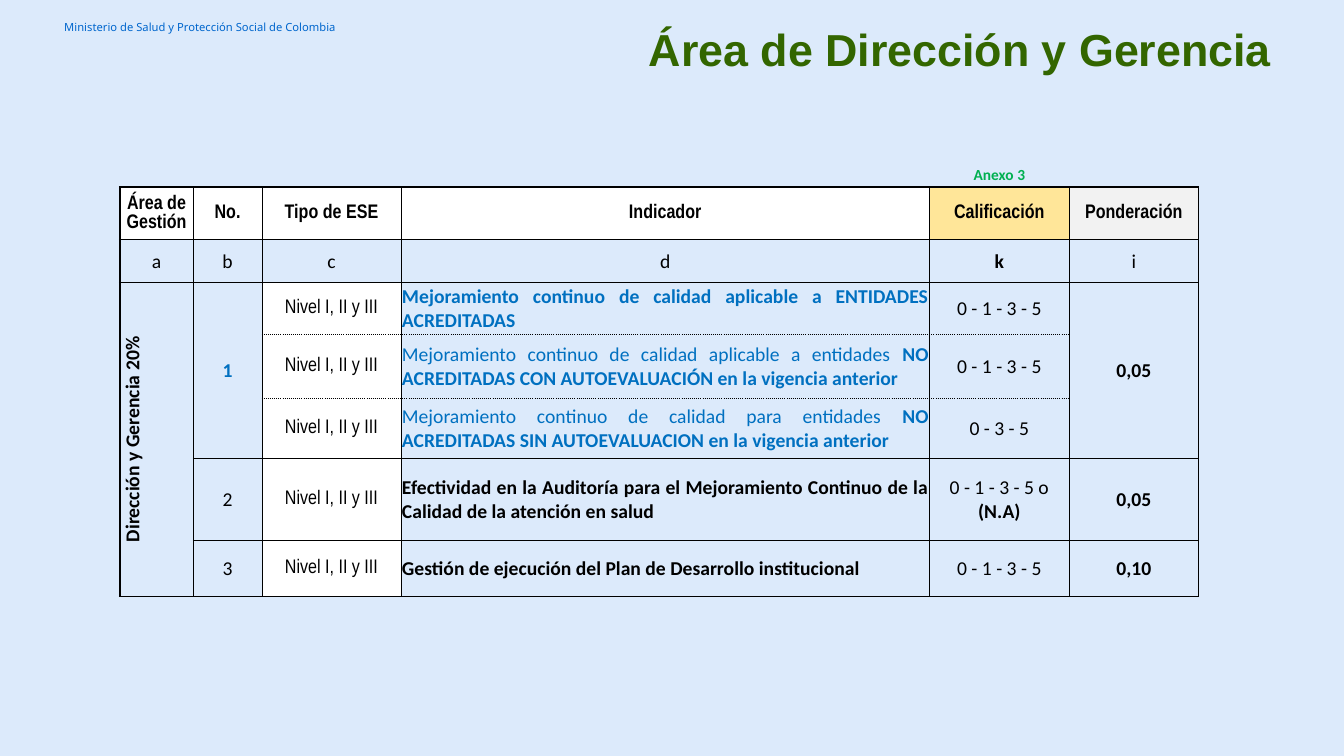
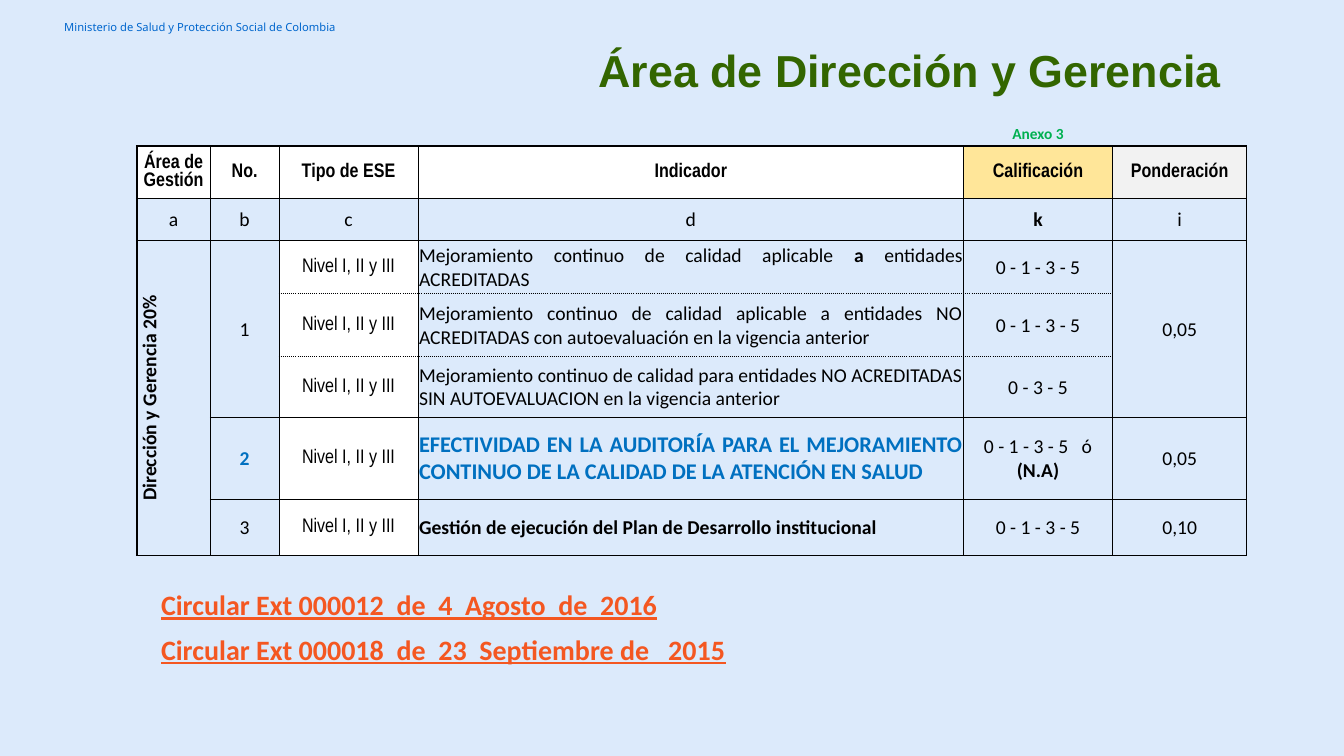
import lxml.etree
import pptx
import pptx.dml.color
import pptx.enum.text
import pptx.oxml.ns
import pptx.util

Cm = pptx.util.Cm
Pt = pptx.util.Pt
qn = pptx.oxml.ns.qn
ALIGN = pptx.enum.text.PP_ALIGN
MIDDLE = pptx.enum.text.MSO_ANCHOR.MIDDLE

COLORS = {
    "background": "DCEAFB", "ministry": "0066CD", "title": "336600",
    "text": "000000", "highlight": "0070C0", "annex": "00B050",
    "circular": "F45721", "white": "FFFFFF", "score": "FFE699", "weight": "F2F2F2",
}
ROW_HEIGHTS = [0.61, 1.32, 1.07, 1.32, 1.6, 1.52, 2.06, 1.42]
EDGE_WIDTHS = [None, 1.5, 0.5, 1, 0.5, 0.5, 0.5, 0.5, 1]
HEADERS = ["Área de Gestión", "No.", "Tipo de ESE", "Indicador", "Calificación", "Ponderación"]
HEADER_FILLS = ["white"] * 4 + ["score", "weight"]
NUMBERS = {3: "1", 6: "2", 7: "3"}
WEIGHTS = {3: "0,05", 6: "0,05", 7: "0,10"}
MERGES = [(3, 0, 7), (3, 1, 5), (3, 5, 5)]
PLAN = [("Gestión de ejecución del Plan de Desarrollo institucional", True)]


def rgb(name):
    """Return the named colour."""
    return pptx.dml.color.RGBColor.from_string(COLORS[name])


def style(p, size, font="Calibri", color="text", bold=None, align=None):
    """Format a whole paragraph."""
    p.font.size = Pt(size)
    p.font.name = font
    p.font.color.rgb = rgb(color)
    p.font.bold = bold
    p.alignment = align


def add_ministry_line(prs, s):
    """Place the ministry's name on the slide master."""
    box = s.shapes.add_textbox(Cm(1.37), Cm(0.36), Cm(7.92), Cm(0.66))
    tf = box.text_frame
    tf.word_wrap = True
    tf.vertical_anchor = MIDDLE
    tf.text = "Ministerio de Salud y Protección Social de Colombia"
    style(tf.paragraphs[0], 8, "Noto Sans", "ministry")
    prs.slide_master.shapes.element.append(box.element)


def add_slide(prs, left, top):
    """Add a slide with the area title at the given place."""
    s = prs.slides.add_slide(prs.slide_layouts[5])
    title = s.shapes.title
    title.left, title.top, title.width, title.height = Cm(left), Cm(top), Cm(18.19), Cm(1.78)
    tf = title.text_frame
    tf.vertical_anchor = MIDDLE
    tf.text = "Área de Dirección y Gerencia"
    p = tf.paragraphs[0]
    style(p, 32, "Arial", "title", True, ALIGN.RIGHT)
    p.line_spacing = 0.9
    return s


def write(cell, lines, size=14, align=ALIGN.CENTER, **look):
    """Fill a cell with lines, each one a string or a list of text and bold pairs."""
    tf = cell.text_frame
    for i, line in enumerate(lines):
        p = tf.add_paragraph() if i else tf.paragraphs[0]
        style(p, size, align=align, **look)
        if isinstance(line, str):
            p.add_run().text = line
            continue
        for text, bold in line:
            r = p.add_run()
            r.text = text
            r.font.bold = bold


def edge(y, x):
    """Return the width and dash of the line above row y in column x."""
    if (x == 0 and 3 < y < 8) or (x in (1, 5) and y in (4, 5)):
        return None, "solid"
    return EDGE_WIDTHS[y], "sysDot" if y in (4, 5) else "solid"


def set_border(tc_pr, tag, width, dash="solid"):
    """Draw one side of a cell, or clear it when there is no width."""
    ln = lxml.etree.Element(qn(tag), w=str(Pt(width or 0)))
    if width:
        fill = lxml.etree.SubElement(ln, qn("a:solidFill"))
        lxml.etree.SubElement(fill, qn("a:srgbClr"), val=COLORS["text"])
        lxml.etree.SubElement(ln, qn("a:prstDash"), val=dash)
    else:
        lxml.etree.SubElement(ln, qn("a:noFill"))
    return ln


def format_cell(cell, y, x):
    """Set the margins, fill and borders of a cell."""
    cell.margin_left = cell.margin_right = cell.margin_top = Cm(0.02)
    cell.margin_bottom = 0
    cell.vertical_anchor = MIDDLE
    fill = HEADER_FILLS[x] if y == 1 else "white" if x == 2 and y > 2 else None
    if fill:
        cell.fill.solid()
        cell.fill.fore_color.rgb = rgb(fill)
    else:
        cell.fill.background()
    if not cell.text:
        p = cell.text_frame.paragraphs[0]
        lxml.etree.SubElement(p._p, qn("a:endParaRPr"), sz="1100")
    side = 0.5 if y else None
    tc_pr = cell._tc.get_or_add_tcPr()
    borders = [
        set_border(tc_pr, "a:lnL", 1.5 if y and x == 0 else side),
        set_border(tc_pr, "a:lnR", side),
        set_border(tc_pr, "a:lnT", *edge(y, x)),
        set_border(tc_pr, "a:lnB", *edge(y + cell.span_height, x)),
    ]
    for i, ln in enumerate(borders):
        tc_pr.insert(i, ln)


def add_indicator_table(s, left, top, widths, indicators, scores, current, bold_weights):
    """Add the indicator table with the current indicator highlighted."""
    frame = s.shapes.add_table(len(ROW_HEIGHTS), len(widths), Cm(left), Cm(top),
                               Cm(sum(widths)), Cm(sum(ROW_HEIGHTS)))
    table = frame.table
    table.first_row = table.horz_banding = False
    for row, height in zip(table.rows, ROW_HEIGHTS):
        row.height = Cm(height)
    for column, width in zip(table.columns, widths):
        column.width = Cm(width)
    for first, x, last in MERGES:
        table.cell(first, x).merge(table.cell(last, x))

    write(table.cell(0, 4), ["Anexo 3"], 11, color="annex", bold=True)
    for x, (header, letter) in enumerate(zip(HEADERS, "abcdki")):
        write(table.cell(1, x), [header], font="Arial Narrow", bold=True)
        write(table.cell(2, x), [letter], bold=letter == "k")
    area = table.cell(3, 0)
    write(area, ["Dirección y Gerencia 20%"], bold=True)
    area._tc.get_or_add_tcPr().set("vert", "vert270")

    for y, (indicator, score) in enumerate(zip(indicators, scores), 3):
        write(table.cell(y, 2), ["Nivel I, II y III"], font="Arial Narrow")
        is_current = y in current["rows"]
        write(table.cell(y, 3), [indicator], current["size"] if is_current else 14,
              ALIGN.JUSTIFY, color="highlight" if is_current else "text")
        write(table.cell(y, 4), score)
        if y in NUMBERS:
            write(table.cell(y, 1), [NUMBERS[y]], bold=is_current,
                  color="highlight" if is_current else "text")
            write(table.cell(y, 5), [WEIGHTS[y]], bold=bold_weights)

    for y in range(len(ROW_HEIGHTS)):
        for x in range(len(widths)):
            format_cell(table.cell(y, x), y, x)


def score_lines(optional):
    """Return the scores of the five indicator rows."""
    full = ["0 - 1 - 3 - 5"]
    return [full, full, ["0 - 3 - 5"], [optional, [("(N.A)", True)]], full]


def add_circulars(s, lines):
    """Add the underlined references below the table."""
    tf = s.shapes.add_textbox(Cm(3.81), Cm(14.68), Cm(20.47), Cm(2.36)).text_frame
    tf.word_wrap = True
    for i, line in enumerate(lines):
        p = tf.add_paragraph() if i else tf.paragraphs[0]
        p.text = line
        style(p, 20, color="circular", bold=True)
        p.font.underline = True
        p.space_after = Pt(8)


def main():
    """Build and save the presentation."""
    prs = pptx.Presentation()
    prs.slide_width, prs.slide_height = Cm(33.87), Cm(19.05)
    fill = prs.slide_master.background.fill
    fill.solid()
    fill.fore_color.rgb = rgb("background")

    s = add_slide(prs, 14.12, 0.43)
    add_ministry_line(prs, s)
    add_indicator_table(
        s, 3.02, 4.11, [1.85, 1.73, 3.51, 13.31, 3.53, 3.25],
        [
            [("Mejoramiento continuo de calidad aplicable a ENTIDADES ACREDITADAS", True)],
            [("Mejoramiento continuo de calidad aplicable a entidades ", False),
             ("NO ACREDITADAS CON AUTOEVALUACIÓN en la vigencia anterior", True)],
            [("Mejoramiento continuo de calidad para entidades ", False),
             ("NO ACREDITADAS SIN AUTOEVALUACION en la vigencia anterior", True)],
            [("Efectividad en la Auditoría para el Mejoramiento Continuo de la Calidad "
              "de la atención en salud", True)],
            PLAN,
        ],
        score_lines("0 - 1 - 3 - 5 o"), {"rows": (3, 4, 5), "size": 14}, True)

    s = add_slide(prs, 12.85, 0.94)
    add_indicator_table(
        s, 3.45, 3.07, [1.85, 1.73, 3.51, 13.74, 3.76, 3.38],
        [
            [("Mejoramiento continuo de calidad aplicable ", False), ("a ", True),
             ("entidades ACREDITADAS", False)],
            [("Mejoramiento continuo de calidad aplicable a entidades NO ACREDITADAS "
              "con autoevaluación en la vigencia anterior", False)],
            [("Mejoramiento continuo de calidad para entidades NO ACREDITADAS "
              "SIN AUTOEVALUACION en la vigencia anterior", False)],
            [("EFECTIVIDAD EN LA AUDITORÍA PARA EL MEJORAMIENTO CONTINUO DE LA CALIDAD "
              "DE LA ATENCIÓN EN SALUD", True)],
            PLAN,
        ],
        score_lines("0 - 1 - 3 - 5   ó"), {"rows": (6,), "size": 16}, False)
    add_circulars(s, ["Circular Ext 000012  de  4  Agosto  de  2016",
                      "Circular Ext 000018  de  23  Septiembre de   2015"])
    prs.save("out.pptx")


if __name__ == "__main__":
    main()
